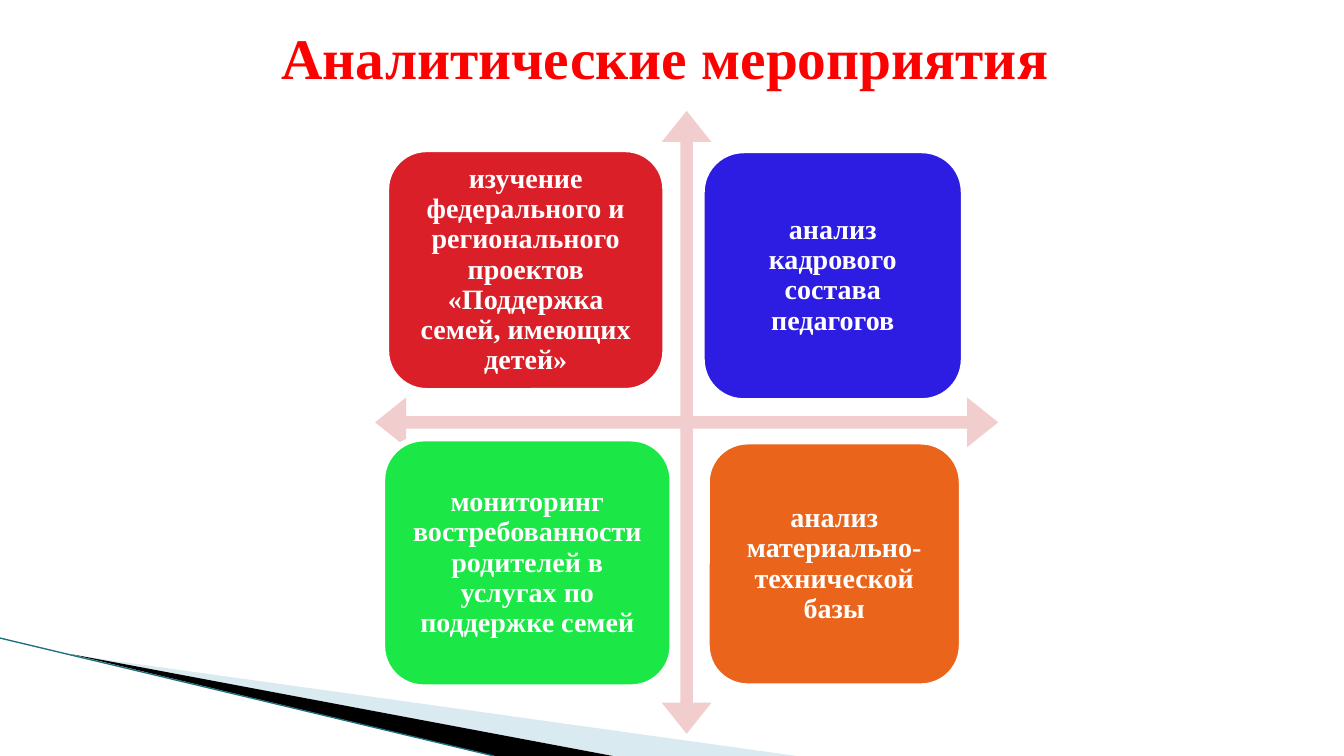
from dataclasses import dataclass

from lxml import etree
from pptx import Presentation
from pptx.dml.color import RGBColor
from pptx.enum import shapes, text
from pptx.oxml import ns
from pptx.util import Inches, Pt

WHITE = RGBColor(0xFF, 0xFF, 0xFF)
BLACK = RGBColor(0, 0, 0)
TITLE_RED = RGBColor(0xFF, 0, 0)
PALE_PINK = RGBColor(0xF1, 0xCD, 0xCD)
PALE_BLUE = RGBColor(0xA0, 0xCB, 0xDC)
TEAL = RGBColor(0x1F, 0x6F, 0x80)
RED = RGBColor(0xDA, 0x1F, 0x28)
BLUE = RGBColor(0x2D, 0x1C, 0xE1)
GREEN = RGBColor(0x1B, 0xE7, 0x47)
ORANGE = RGBColor(0xEB, 0x64, 0x1B)

FONT = "Times New Roman"
MARGINS = ("margin_left", "margin_top", "margin_right", "margin_bottom")


@dataclass
class Activity:
    wording: str
    left: float
    top: float
    width: float
    height: float
    color: RGBColor


@dataclass
class Wedge:
    points: list[tuple[float, float]]
    color: RGBColor
    opacity: int = 100


ACTIVITIES = [
    Activity("изучение федерального и регионального проектов «Поддержка семей, имеющих детей»",
             3.83, 1.48, 2.77, 2.4, RED),
    Activity("анализ кадрового состава педагогов", 6.96, 1.49, 2.6, 2.49, BLUE),
    Activity("мониторинг востребованности родителей в услугах по поддержке семей",
             3.79, 4.35, 2.88, 2.47, GREEN),
    Activity("анализ материально-технической базы", 7.01, 4.38, 2.53, 2.43, ORANGE),
]

WEDGES = [
    Wedge([(0.73, 6.5), (7.9, 7.5), (6.08, 7.5)], PALE_BLUE, 40),
    Wedge([(0.71, 6.49), (6.08, 7.5), (4.9, 7.5)], BLACK),
]


def format_paragraph(paragraph, size: float, color: RGBColor) -> None:
    paragraph.alignment = text.PP_ALIGN.CENTER
    for name, value in {"name": FONT, "size": Pt(size), "bold": True}.items():
        setattr(paragraph.font, name, value)
    paragraph.font.color.rgb = color


def paint(shape, color: RGBColor) -> None:
    shape.shadow.inherit = False
    shape.fill.solid()
    shape.fill.fore_color.rgb = color
    shape.line.fill.background()


def draw_wedge(slide, wedge: Wedge) -> None:
    start, *others = [(Inches(x), Inches(y)) for x, y in wedge.points]
    builder = slide.shapes.build_freeform(*start)
    builder.add_line_segments(others, close=True)
    shape = builder.convert_to_shape()
    paint(shape, wedge.color)
    if wedge.opacity < 100:
        color = shape.fill._xPr.find(".//" + ns.qn("a:srgbClr"))
        etree.SubElement(color, ns.qn("a:alpha"), val=str(wedge.opacity * 1000))


def draw_activity(slide, activity: Activity) -> None:
    card = slide.shapes.add_shape(
        shapes.MSO_SHAPE.ROUNDED_RECTANGLE, Inches(activity.left), Inches(activity.top),
        Inches(activity.width), Inches(activity.height))
    paint(card, activity.color)
    card.line.color.rgb = WHITE
    card.line.width = Pt(4.33)
    frame = card.text_frame
    for margin in MARGINS:
        setattr(frame, margin, Inches(0.08))
    frame.word_wrap = True
    frame.vertical_anchor = text.MSO_ANCHOR.MIDDLE
    frame.text = activity.wording
    paragraph = frame.paragraphs[0]
    paragraph.line_spacing = 0.9
    format_paragraph(paragraph, 20, WHITE)


def main() -> None:
    presentation = Presentation()
    presentation.slide_width = Inches(13.33)
    presentation.slide_height = Inches(7.5)
    slide = presentation.slides.add_slide(presentation.slide_layouts[5])

    # Corner decoration
    for wedge in WEDGES:
        draw_wedge(slide, wedge)
    corner_edge = slide.shapes.add_connector(
        shapes.MSO_CONNECTOR.STRAIGHT, Inches(0), Inches(6.33), Inches(4.9), Inches(7.5))
    corner_edge.line.color.rgb = TEAL
    corner_edge.line.width = Pt(0.95)
    etree.SubElement(corner_edge._element.spPr, ns.qn("a:effectLst"))

    # Four-way arrow behind the activities
    axes = slide.shapes.add_shape(
        shapes.MSO_SHAPE.QUAD_ARROW, Inches(3.72), Inches(1.1), Inches(6.18), Inches(6.18))
    paint(axes, PALE_PINK)
    for index, value in enumerate((0.02, 0.04, 0.05)):
        axes.adjustments[index] = value

    # Activities
    for activity in ACTIVITIES:
        draw_activity(slide, activity)

    # Title
    title = slide.shapes.title
    title.left, title.top = Inches(0.92), Inches(0.21)
    title.width, title.height = Inches(11.5), Inches(0.71)
    title.text_frame.text = "Аналитические мероприятия "
    title.text_frame.vertical_anchor = text.MSO_ANCHOR.MIDDLE
    format_paragraph(title.text_frame.paragraphs[0], 41, TITLE_RED)

    presentation.save("out.pptx")


if __name__ == "__main__":
    main()
